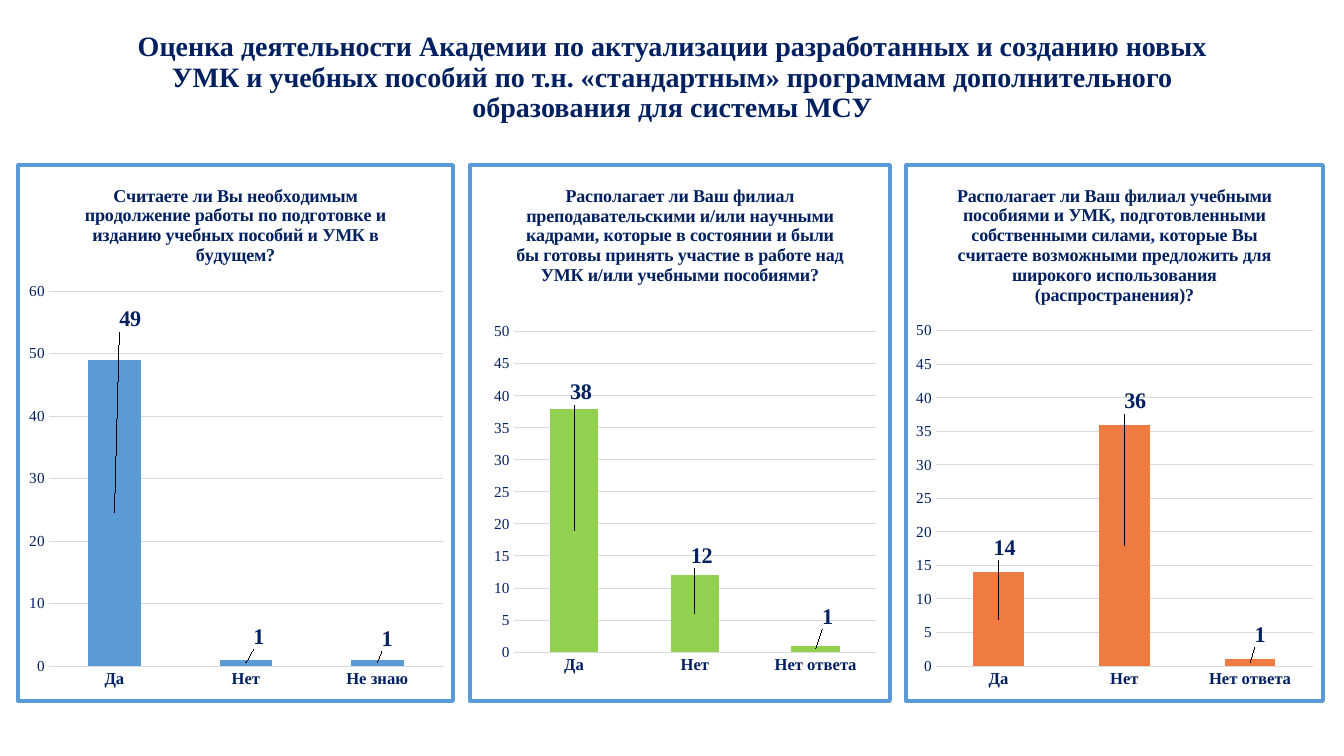
"""Build a slide comparing three survey questions as column charts."""
from dataclasses import dataclass

from pptx import Presentation
from pptx.chart.chart import Chart
from pptx.chart.data import CategoryChartData
from pptx.dml.color import RGBColor
from pptx.enum.chart import XL_CHART_TYPE, XL_TICK_MARK
from pptx.enum.text import MSO_ANCHOR, PP_ALIGN
from pptx.oxml import parse_xml
from pptx.oxml.ns import nsdecls
from pptx.util import Emu, Pt

PX = 914400 / 100.8
FONT = "Times New Roman"
COLORS = {
    "navy": "002060",
    "blue": "5B9BD5",
    "green": "92D050",
    "orange": "EE7B42",
    "grid": "D9D9D9",
    "white": "FFFFFF",
}
TITLE = (
    "Оценка деятельности Академии по актуализации разработанных и созданию новых "
    "УМК и учебных пособий по т.н. «стандартным» программам дополнительного "
    "образования для системы МСУ"
)
CHART_TOP, CHART_HEIGHT = 163, 540


@dataclass(frozen=True)
class Box:
    left: int
    top: int
    width: int
    height: int


@dataclass(frozen=True)
class Survey:
    question: str
    left: int
    width: int
    plot: Box
    color: str
    answers: tuple[str, ...]
    votes: tuple[int, ...]
    label_shifts: tuple[tuple[int, int], ...]
    axis_max: int
    axis_step: int


SURVEYS = (
    Survey(
        "Считаете ли Вы необходимым продолжение работы по подготовке и "
        "изданию учебных пособий и УМК в будущем?",
        16, 439, Box(47, 290, 398, 378), "blue",
        ("Да", "Нет", "Не знаю"), (49, 1, 1),
        ((16, -195), (13, -26), (10, -24)), 60, 10,
    ),
    Survey(
        "Располагает ли Ваш филиал преподавательскими и/или научными кадрами, "
        "которые в состоянии и были бы готовы принять участие в работе над "
        "УМК и/или учебными пособиями?",
        468, 424, Box(512, 331, 366, 323), "green",
        ("Да", "Нет", "Нет ответа"), (38, 12, 1),
        ((7, -139), (7, -58), (12, -32)), 50, 5,
    ),
    Survey(
        "Располагает ли Ваш филиал учебными пособиями и УМК, подготовленными "
        "собственными силами, которые Вы считаете возможными предложить для "
        "широкого использования (распространения)?",
        904, 421, Box(934, 330, 381, 338), "orange",
        ("Да", "Нет", "Нет ответа"), (14, 36, 1),
        ((6, -72), (11, -145), (10, -28)), 50, 5,
    ),
)


def px(n: int) -> Emu:
    return Emu(round(n * PX))


def rgb(name: str) -> RGBColor:
    return RGBColor.from_string(COLORS[name])


def style(font, size: int, bold: bool) -> None:
    font.name, font.size, font.bold = FONT, Pt(size), bold
    font.color.rgb = rgb("navy")


def layout(target: str = "", **values: float):
    inner = f'<c:layoutTarget val="{target}"/>' if target else ""
    if target:
        inner += '<c:xMode val="edge"/><c:yMode val="edge"/>'
    inner += "".join(f'<c:{k} val="{v:.4f}"/>' for k, v in values.items())
    return parse_xml(
        f'<c:layout {nsdecls("c")}><c:manualLayout>{inner}</c:manualLayout></c:layout>'
    )


def add_title(slide) -> None:
    sp = slide.shapes.add_textbox(px(111), px(27), px(1123), px(136))
    tf = sp.text_frame
    tf.word_wrap = True
    tf.vertical_anchor = MSO_ANCHOR.MIDDLE
    tf.margin_bottom = px(39)
    p = tf.paragraphs[0]
    p.alignment, p.line_spacing = PP_ALIGN.CENTER, 0.9
    r = p.add_run()
    r.text = TITLE
    style(r.font, 20, True)


def frame_chart(chart: Chart, survey: Survey) -> None:
    chart_xml = chart._chartSpace.chart
    chart_xml.addnext(parse_xml(
        f'<c:spPr {nsdecls("c", "a")}>'
        f'<a:solidFill><a:srgbClr val="{COLORS["white"]}"/></a:solidFill>'
        f'<a:ln w="{Pt(3)}"><a:solidFill><a:srgbClr val="{COLORS["blue"]}"/>'
        '</a:solidFill><a:round/></a:ln></c:spPr>'
    ))
    area = chart_xml.plotArea
    for old in area.xpath("c:layout"):
        area.remove(old)
    box = survey.plot
    area.insert(0, layout(
        "inner",
        x=(box.left - survey.left) / survey.width,
        y=(box.top - CHART_TOP) / CHART_HEIGHT,
        w=box.width / survey.width,
        h=box.height / CHART_HEIGHT,
    ))


def style_axes(chart: Chart, survey: Survey) -> None:
    axes = ((chart.category_axis, 12, True), (chart.value_axis, 11, False))
    for axis, size, bold in axes:
        axis.major_tick_mark = axis.minor_tick_mark = XL_TICK_MARK.NONE
        axis.format.line.fill.background()
        style(axis.tick_labels.font, size, bold)
    values = chart.value_axis
    values.minimum_scale, values.maximum_scale = 0, survey.axis_max
    values.major_unit = survey.axis_step
    line = values.major_gridlines.format.line
    line.color.rgb, line.width = rgb("grid"), Pt(0.75)


def style_columns(chart: Chart, survey: Survey) -> None:
    plot = chart.plots[0]
    plot.gap_width, plot.overlap, plot.vary_by_categories = 150, 100, False
    series = plot.series[0]
    series.format.fill.solid()
    series.format.fill.fore_color.rgb = rgb(survey.color)
    series.data_labels.show_value = True
    style(series.data_labels.font, 16, True)
    for i in range(len(survey.votes)):
        style(series.points[i].data_label.font, 16, True)
    marks = series._element.xpath("c:dLbls/c:dLbl/c:idx")
    for idx, (dx, dy) in zip(marks, survey.label_shifts):
        idx.addnext(layout(x=dx / survey.width, y=dy / CHART_HEIGHT))


def add_survey(slide, survey: Survey) -> None:
    data = CategoryChartData()
    data.categories = survey.answers
    data.add_series("Series 1", survey.votes)
    chart = slide.shapes.add_chart(
        XL_CHART_TYPE.COLUMN_STACKED, px(survey.left), px(CHART_TOP),
        px(survey.width), px(CHART_HEIGHT), data,
    ).chart
    chart.has_legend = False
    chart.font.name, chart.font.size = "Calibri", Pt(10)
    chart.has_title = True
    chart.chart_title.include_in_layout = False
    r = chart.chart_title.text_frame.paragraphs[0].add_run()
    r.text = survey.question
    style(r.font, 13, True)
    frame_chart(chart, survey)
    style_axes(chart, survey)
    style_columns(chart, survey)


def main() -> None:
    prs = Presentation()
    prs.slide_width, prs.slide_height = px(1344), px(756)
    slide = prs.slides.add_slide(prs.slide_layouts[6])
    add_title(slide)
    for survey in SURVEYS:
        add_survey(slide, survey)
    prs.save("out.pptx")


if __name__ == "__main__":
    main()
